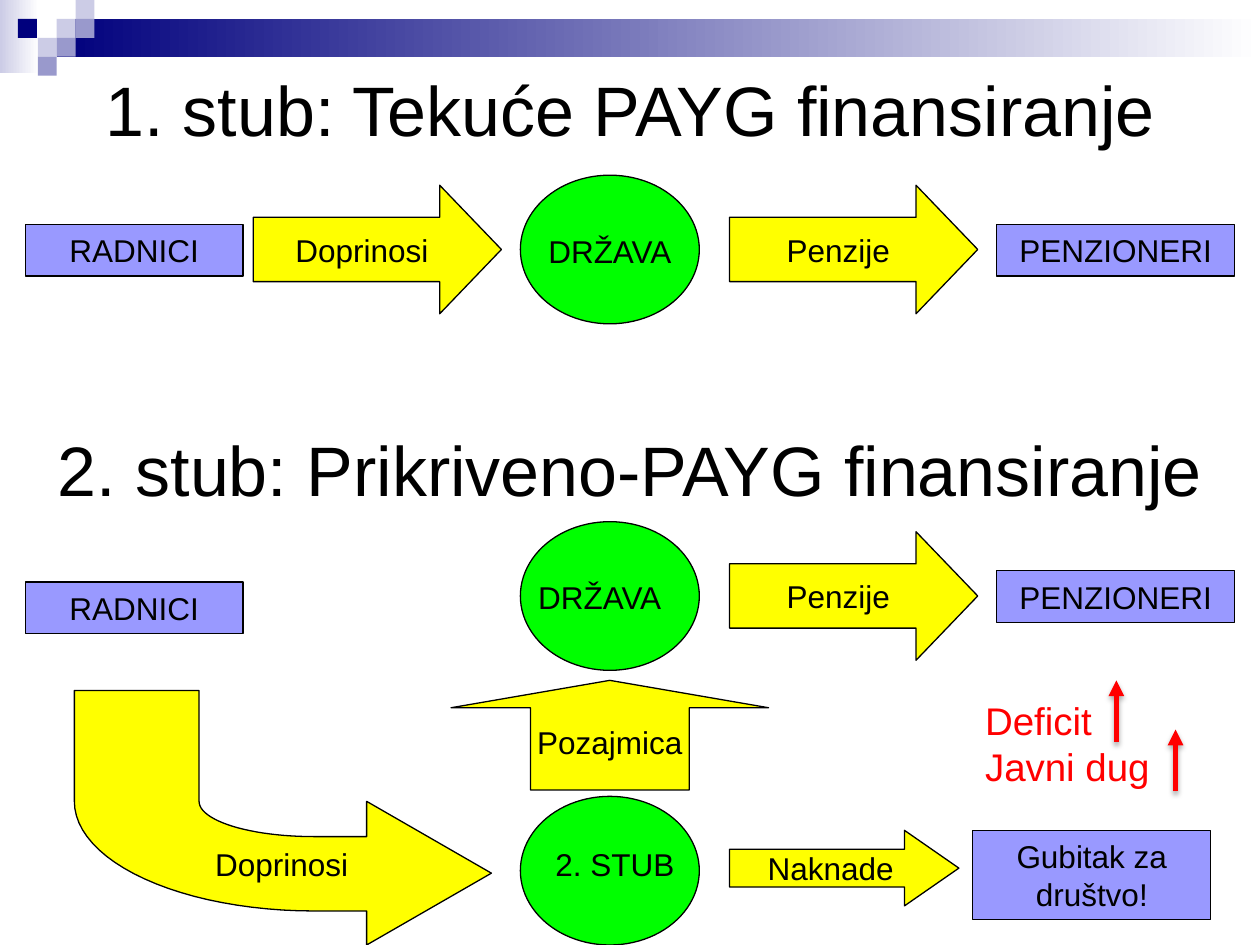
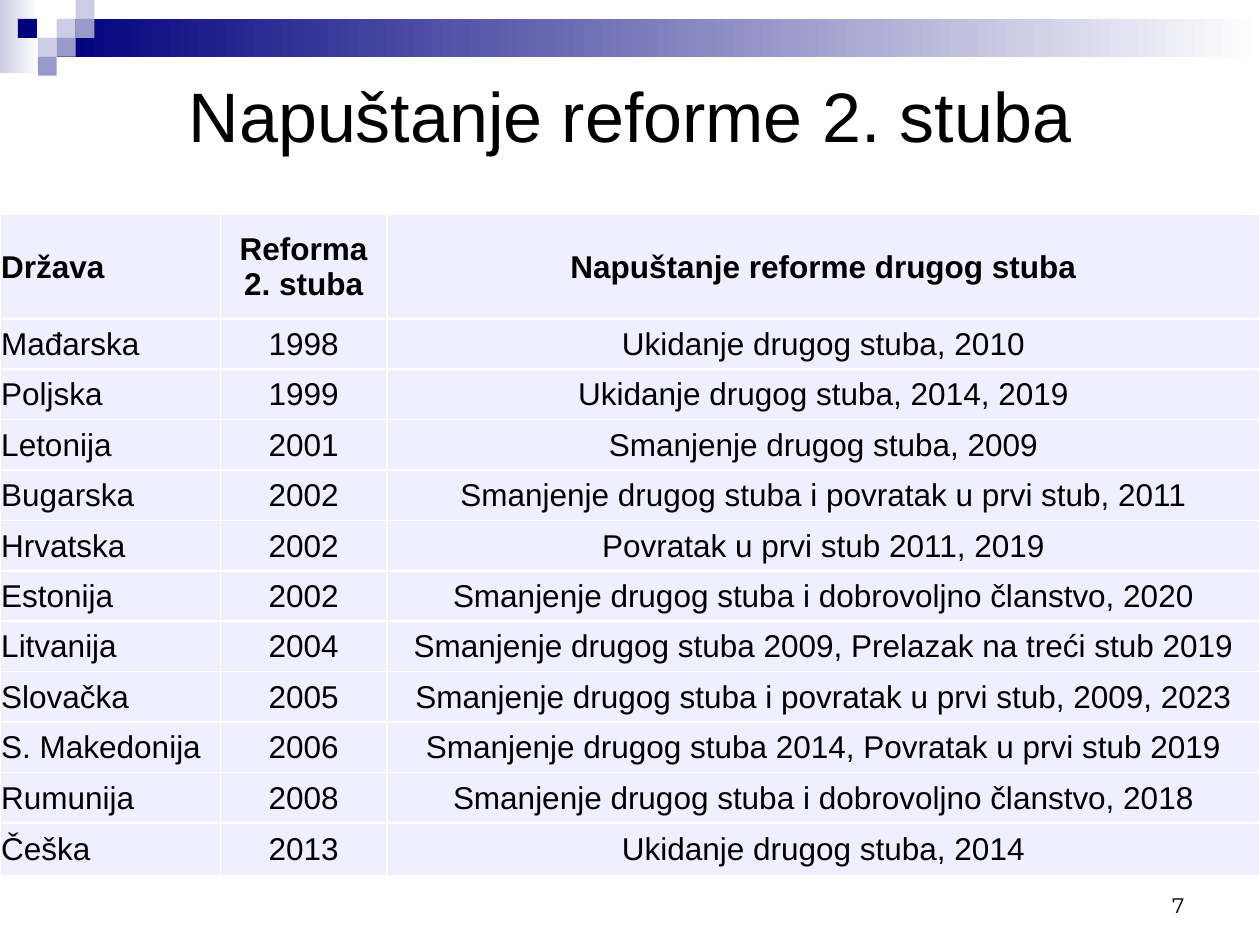
from dataclasses import dataclass
from math import cos, pi, sin

from lxml import etree
from pptx import Presentation
from pptx import util as u
from pptx.dml.color import RGBColor
from pptx.enum import shapes, text
from pptx.oxml.ns import nsdecls, qn
from pptx.oxml import parse_xml

SHAPE = shapes.MSO_SHAPE
ALIGN = text.PP_ALIGN
ANCHOR = text.MSO_ANCHOR


@dataclass(frozen=True)
class Theme:
    font: str = "Arial"
    number_font: str = "Montserrat"
    black: str = "000000"
    white: str = "FFFFFF"
    navy: str = "00007D"
    slate: str = "9999CC"
    mist: str = "CCCCE6"
    person: str = "9999FF"
    state: str = "00FF00"
    arrow: str = "FFFF00"
    alert: str = "FF0000"
    cell: str = "EFEFFF"
    title_size: int = 40
    alert_size: int = 22
    body_size: int = 18
    number_size: int = 12


THEME = Theme()

REFORMS = [
    ("Država", "Reforma\v2. stuba", "Napuštanje reforme drugog stuba"),
    ("Mađarska", "1998", "Ukidanje drugog stuba, 2010"),
    ("Poljska", "1999", "Ukidanje drugog stuba, 2014, 2019"),
    ("Letonija", "2001", "Smanjenje drugog stuba, 2009"),
    ("Bugarska", "2002", "Smanjenje drugog stuba i povratak u prvi stub, 2011"),
    ("Hrvatska", "2002", "Povratak u prvi stub 2011, 2019"),
    ("Estonija", "2002", "Smanjenje drugog stuba i dobrovoljno članstvo, 2020"),
    ("Litvanija", "2004", "Smanjenje drugog stuba 2009, Prelazak na treći stub 2019"),
    ("Slovačka", "2005", "Smanjenje drugog stuba i povratak u prvi stub, 2009, 2023"),
    ("S. Makedonija", "2006", "Smanjenje drugog stuba 2014, Povratak u prvi stub 2019"),
    ("Rumunija", "2008", "Smanjenje drugog stuba i dobrovoljno članstvo, 2018"),
    ("Češka", "2013", "Ukidanje drugog stuba, 2014"),
]


def color(value):
    return RGBColor.from_string(value)


def inches(box):
    return [u.Inches(length) for length in box]


# Text and shape helpers
def write(frame, words, size=THEME.body_size, ink=THEME.black, align=ALIGN.CENTER,
          font=THEME.font, bold=False):
    frame.text = words
    for para in frame.paragraphs:
        para.alignment = align
        for span in para.runs:
            span.font.name = font
            span.font.size = u.Pt(size)
            span.font.bold = bold
            span.font.color.rgb = color(ink)


def add_label(slide, box, words, anchor=ANCHOR.TOP, **style):
    frame = slide.shapes.add_textbox(*inches(box)).text_frame
    frame.word_wrap = True
    frame.vertical_anchor = anchor
    write(frame, words, **style)


def add_title(slide, box, words):
    add_label(slide, box, words, ANCHOR.MIDDLE, size=THEME.title_size)


def paint(shape, fill, outlined=True):
    shape.shadow.inherit = False
    shape.fill.solid()
    shape.fill.fore_color.rgb = color(fill)
    if outlined:
        shape.line.color.rgb = color(THEME.black)
        shape.line.width = u.Pt(0.75)
    else:
        shape.line.fill.background()
    return shape


def add_person(slide, box, words):
    shape = paint(slide.shapes.add_shape(SHAPE.RECTANGLE, *inches(box)), THEME.person)
    shape.text_frame.word_wrap = True
    write(shape.text_frame, words)


def add_arrow(slide, box, words, head=0.48, kind=SHAPE.RIGHT_ARROW):
    shape = paint(slide.shapes.add_shape(kind, *inches(box)), THEME.arrow)
    shape.adjustments[1] = head
    shape.text_frame.word_wrap = False
    shape.text_frame.vertical_anchor = ANCHOR.MIDDLE
    write(shape.text_frame, words)


def add_circle(slide, left, top, words, label_dx=0, label_dy=0.4):
    width = 1.42
    paint(slide.shapes.add_shape(SHAPE.OVAL, *inches((left, top, width, 1.18))), THEME.state)
    add_label(slide, (left + label_dx, top + label_dy, width, 0.4), words)


# Header band shared by the slides
def add_band(slide):
    def block(box):
        return slide.shapes.add_shape(SHAPE.RECTANGLE, *inches(box))

    for box, start in (((0, 0, 0.31, 0.58), THEME.mist),
                       ((0.45, 0.15, 9.55, 0.3), THEME.navy)):
        fade = paint(block(box), start, outlined=False)
        fade.fill.gradient()
        fade.fill.gradient_angle = 0
        for stop, shade in zip(fade.fill.gradient_stops, (start, THEME.white)):
            stop.color.rgb = color(shade)

    side = 0.15
    for column, row, shade in ((3, 1, THEME.mist), (4, 0, THEME.mist), (4, 1, THEME.slate),
                               (2, 2, THEME.mist), (0.95, 1, THEME.navy),
                               (3, 2, THEME.slate), (2, 3, THEME.slate)):
        paint(block((column * side, row * side, side, side)), shade, outlined=False)


# State paying pensions: the same row in both schemes
def add_pension_flow(slide, left, top, label_dx=0):
    add_circle(slide, left, top, "DRŽAVA", label_dx)
    add_arrow(slide, (left + 1.66, top + 0.08, 1.97, 1.02), "Penzije")
    add_person(slide, (left + 3.78, top + 0.39, 1.89, 0.41), "PENZIONERI")


def add_workers(slide, left, top):
    add_person(slide, (left, top, 1.73, 0.41), "RADNICI")


# Arrow that drops from the workers and bends right
def add_bent_arrow(slide, left, top):
    bend_x, bend_y, steps = 1.9, 0.88, 24
    angles = [pi / 2 * step / steps for step in range(steps + 1)]

    def arc(radius_x, radius_y):
        return [(bend_x - radius_x * cos(angle), bend_y + radius_y * sin(angle))
                for angle in angles]

    outline = [(0, 0), *arc(1.9, 0.87), (2.32, 1.75), (2.32, 2.02), (3.31, 1.45),
               (2.32, 0.88), (2.32, 1.16), *reversed(arc(0.91, 0.28)), (0.99, 0)]
    points = [inches((left + x, top + y)) for x, y in outline]
    builder = slide.shapes.build_freeform(*points[0])
    builder.add_line_segments(points[1:], close=True)
    paint(builder.convert_to_shape(), THEME.arrow)
    add_label(slide, (left + 1.02, top + 1.18, 1.57, 0.4), "Doprinosi", align=ALIGN.LEFT)


# Red notes with rising arrows
def add_rise(slide, x, top):
    ends = inches((x, top + 0.49, x, top))
    rise = slide.shapes.add_connector(shapes.MSO_CONNECTOR.STRAIGHT, *ends)
    rise.line.color.rgb = color(THEME.alert)
    rise.line.width = u.Pt(3)
    etree.SubElement(rise.line._get_or_add_ln(), qn("a:tailEnd"), type="triangle")
    rise._element.spPr.append(parse_xml(
        f'<a:effectLst {nsdecls("a")}><a:outerShdw blurRad="{u.Pt(3.1)}" '
        f'dist="{u.Pt(1.8)}" dir="5400000" rotWithShape="0"><a:srgbClr val="{THEME.black}">'
        '<a:alpha val="35000"/></a:srgbClr></a:outerShdw></a:effectLst>'))


def add_alerts(slide, left, top):
    add_label(slide, (left, top, 2.17, 0.84), "Deficit\nJavni dug",
              size=THEME.alert_size, ink=THEME.alert, align=ALIGN.LEFT)
    add_rise(slide, left + 1.14, top - 0.08)
    add_rise(slide, left + 1.61, top + 0.31)


# Table of reforms
def add_reform_table(slide, left, top):
    heights = [0.83] + [0.4] * (len(REFORMS) - 2) + [0.42]
    widths = [1.75, 1.32, 6.93]
    box = inches((left, top, sum(widths), sum(heights)))
    table = slide.shapes.add_table(len(heights), len(widths), *box).table
    table.first_row = table.horz_banding = False
    for column, width in zip(table.columns, widths):
        column.width = u.Inches(width)
    for row, height, words in zip(table.rows, heights, REFORMS):
        row.height = u.Inches(height)
        for index, cell in enumerate(row.cells):
            cell.margin_left = cell.margin_right = cell.margin_top = u.Inches(0.01)
            cell.margin_bottom = 0
            cell.vertical_anchor = ANCHOR.MIDDLE
            write(cell.text_frame, words[index], bold=words is REFORMS[0],
                  align=ALIGN.CENTER if index else ALIGN.LEFT)
            for side in "LRTB":
                cell._tc.get_or_add_tcPr().append(parse_xml(
                    f'<a:ln{side} {nsdecls("a")} w="{u.Pt(1)}"><a:solidFill>'
                    f'<a:srgbClr val="{THEME.white}"/></a:solidFill></a:ln{side}>'))
            cell.fill.solid()
            cell.fill.fore_color.rgb = color(THEME.cell)


# Slides
def add_slide(deck):
    slide = deck.slides.add_slide(deck.slide_layouts[6])
    add_band(slide)
    return slide


def build_financing(deck):
    slide = add_slide(deck)

    # First pillar
    add_title(slide, (0.5, 0.5, 9, 0.73), "1. stub: Tekuće PAYG finansiranje")
    add_workers(slide, 0.2, 1.78)
    add_arrow(slide, (2.01, 1.47, 1.97, 1.02), "Doprinosi")
    add_pension_flow(slide, 4.13, 1.39)

    # Second pillar
    add_title(slide, (0.2, 3.36, 9.6, 0.71), "2. stub: Prikriveno-PAYG finansiranje")
    add_workers(slide, 0.2, 4.62)
    add_bent_arrow(slide, 0.59, 5.48)
    add_pension_flow(slide, 4.13, 4.14, label_dx=-0.08)
    add_circle(slide, 4.13, 6.32, "2. STUB", label_dx=0.04, label_dy=0.34)
    add_arrow(slide, (3.58, 5.4, 2.52, 0.87), "Pozajmica", 0.25, SHAPE.UP_ARROW)
    add_arrow(slide, (5.79, 6.59, 1.82, 0.6), "Naknade", 0.72)
    add_person(slide, (7.72, 6.59, 1.89, 0.71), "Gubitak za društvo!")
    add_alerts(slide, 7.72, 5.48)


def build_reversals(deck):
    slide = add_slide(deck)
    add_title(slide, (0.5, 0.5, 9, 0.81), "Napuštanje reforme 2. stuba")
    add_reform_table(slide, 0, 1.7)
    add_label(slide, (7.17, 6.83, 2.33, 0.5), "7", ANCHOR.BOTTOM, size=THEME.number_size,
              align=ALIGN.RIGHT, font=THEME.number_font)


def main():
    deck = Presentation()
    deck.slide_width, deck.slide_height = inches((10, 7.5))
    build_financing(deck)
    build_reversals(deck)
    deck.save("out.pptx")


if __name__ == "__main__":
    main()
